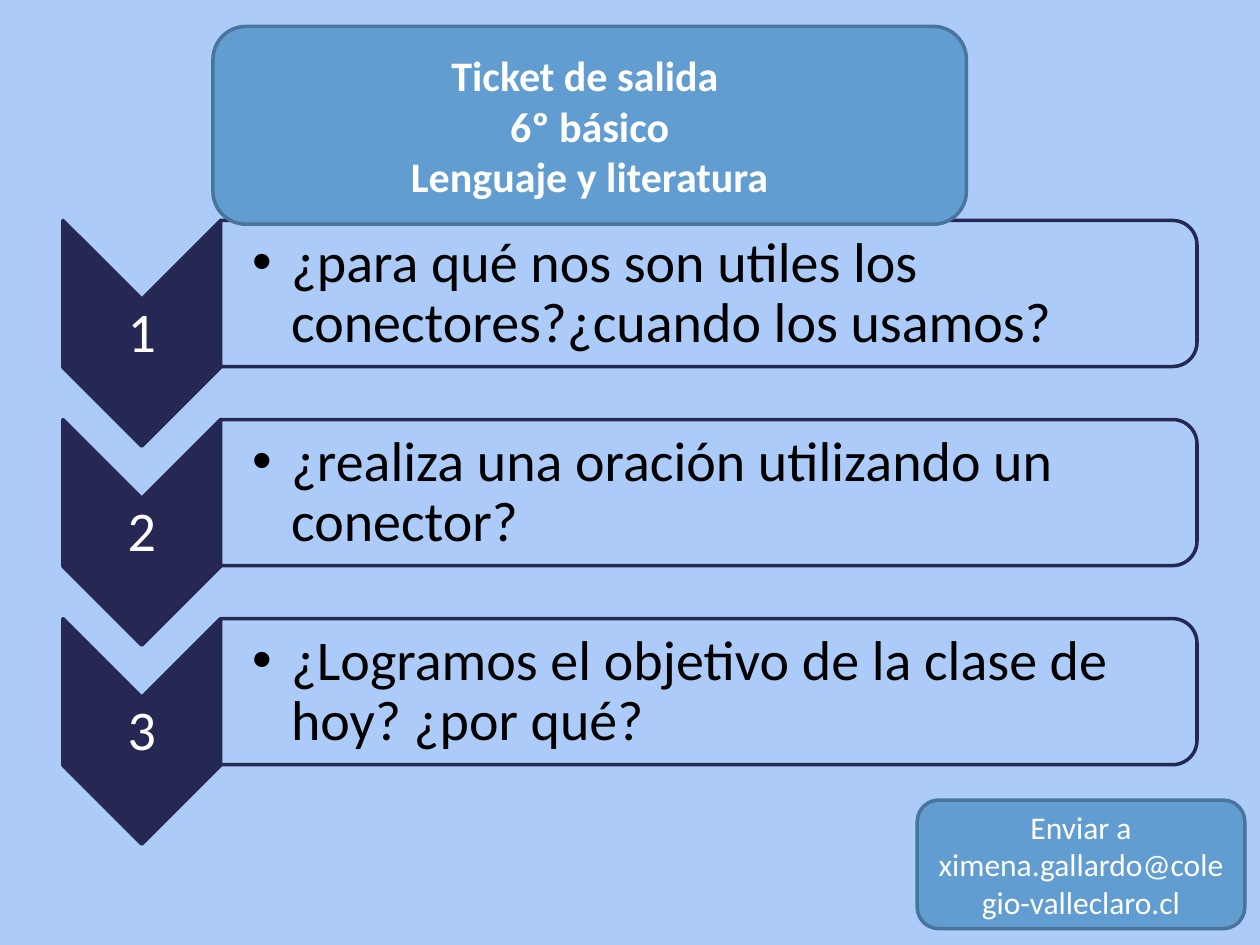
from dataclasses import dataclass

from lxml.etree import SubElement
from pptx import Presentation
from pptx.dml.color import RGBColor
from pptx.enum.shapes import MSO_SHAPE
from pptx.enum.text import MSO_ANCHOR, MSO_AUTO_SIZE, PP_ALIGN
from pptx.oxml.ns import qn
from pptx.util import Inches, Pt


@dataclass(frozen=True)
class Theme:
    font: str = "Calibri"
    sky: str = "ACCBF9"
    navy: str = "242852"
    blue: str = "629DD1"
    blue_edge: str = "49749B"
    white: str = "FFFFFF"
    black: str = "000000"
    question_size: int = 32
    title_size: int = 24
    contact_size: int = 18
    line_width: int = 2


class TicketSlide:
    def __init__(self, slide, theme):
        self.slide = slide
        self.theme = theme
        slide.background.fill.solid()
        slide.background.fill.fore_color.rgb = RGBColor.from_string(theme.sky)

    def shape(self, preset, left, top, width, height, fill, edge, turned=False):
        if turned:
            left += (width - height) / 2
            top += (height - width) / 2
            width, height = height, width
        shape = self.slide.shapes.add_shape(
            preset, Inches(left), Inches(top), Inches(width), Inches(height))
        shape.rotation = 90 if turned else 0
        shape.shadow.inherit = False
        shape.fill.solid()
        shape.fill.fore_color.rgb = RGBColor.from_string(fill)
        shape.line.color.rgb = RGBColor.from_string(edge)
        shape.line.width = Pt(self.theme.line_width)
        return shape

    def text(self, holder, lines, size, color, align=PP_ALIGN.CENTER,
             bold=False, insets=(0.1, 0.05, 0.1, 0.05), spacing=1.0):
        frame = holder.text_frame
        frame.word_wrap = True
        frame.auto_size = MSO_AUTO_SIZE.NONE
        frame.vertical_anchor = MSO_ANCHOR.MIDDLE
        (frame.margin_left, frame.margin_top,
         frame.margin_right, frame.margin_bottom) = map(Inches, insets)
        for index, line in enumerate(lines):
            paragraph = frame.add_paragraph() if index else frame.paragraphs[0]
            paragraph.alignment = align
            paragraph.line_spacing = spacing
            paragraph.space_before = Pt(0)
            run = paragraph.add_run()
            run.text = line
            run.font.name = self.theme.font
            run.font.size = Pt(size)
            run.font.bold = bold
            run.font.color.rgb = RGBColor.from_string(color)

    def place(self, placeholder, left, top, width, height):
        placeholder.left, placeholder.top = Inches(left), Inches(top)
        placeholder.width, placeholder.height = Inches(width), Inches(height)
        placeholder.element.getparent().append(placeholder.element)

    def panel(self, left, top, width, height):
        return self.shape(MSO_SHAPE.ROUNDED_RECTANGLE, left, top, width, height,
                          self.theme.blue, self.theme.blue_edge)

    def title(self, lines, *box):
        self.panel(*box)
        heading = self.slide.shapes.title
        self.place(heading, *box)
        self.text(heading, lines, self.theme.title_size, self.theme.white, bold=True)

    def contact(self, message, *box):
        self.text(self.panel(*box), [message], self.theme.contact_size, self.theme.white)

    def number(self, value, top):
        theme = self.theme
        self.shape(MSO_SHAPE.CHEVRON, 0.5, top, 1.25, 1.79,
                   theme.navy, theme.navy, turned=True)
        label = self.slide.shapes.add_textbox(
            Inches(0.5), Inches(top + 0.63), Inches(1.25), Inches(0.54))
        self.text(label, [str(value)], theme.question_size, theme.white,
                  insets=(0.02,) * 4, spacing=0.9)

    def question(self, placeholder, wording, top):
        theme = self.theme
        frame = self.shape(MSO_SHAPE.ROUND_2_SAME_RECTANGLE, 1.75, top, 7.75, 1.16,
                           theme.sky, theme.navy, turned=True)
        color = frame.fill._xPr.find(qn("a:solidFill"))[0]
        SubElement(color, qn("a:alpha"), val="90000")
        self.place(placeholder, 1.75, top + 0.06, 7.69, 1.05)
        self.text(placeholder, [wording], theme.question_size, theme.black,
                  PP_ALIGN.LEFT, insets=(0.25, 0.02, 0.02, 0.02), spacing=0.9)
        properties = placeholder.text_frame.paragraphs[0]._p.get_or_add_pPr()
        properties.set("marL", str(Inches(0.31)))
        properties.set("indent", str(Inches(-0.31)))
        SubElement(properties, qn("a:buFont"), typeface="Arial")
        SubElement(properties, qn("a:buChar"), char="•")


def main():
    deck = Presentation()
    deck.slide_width, deck.slide_height = Inches(10), Inches(7.5)
    slide = deck.slides.add_slide(deck.slide_layouts.get_by_name("Comparison"))
    ticket = TicketSlide(slide, Theme())

    questions = [
        "¿para qué nos son utiles los conectores?¿cuando los usamos?",
        "¿realiza una oración utilizando un conector?",
        "¿Logramos el objetivo de la clase de hoy? ¿por qué?",
    ]
    bodies = [body for body in slide.placeholders if body.placeholder_format.idx]
    for index, (body, wording) in enumerate(zip(bodies, questions)):
        top = 1.75 + 1.58 * index
        ticket.number(index + 1, top)
        ticket.question(body, wording, top)
    for spare in bodies[len(questions):]:
        spare.element.getparent().remove(spare.element)

    ticket.title(["Ticket de salida ", "6º básico", "Lenguaje y literatura"],
                 1.69, 0.21, 5.98, 1.57)
    ticket.contact("Enviar a ximena.gallardo@colegio-valleclaro.cl",
                   7.28, 6.35, 2.6, 1.02)
    deck.save("out.pptx")


if __name__ == "__main__":
    main()
